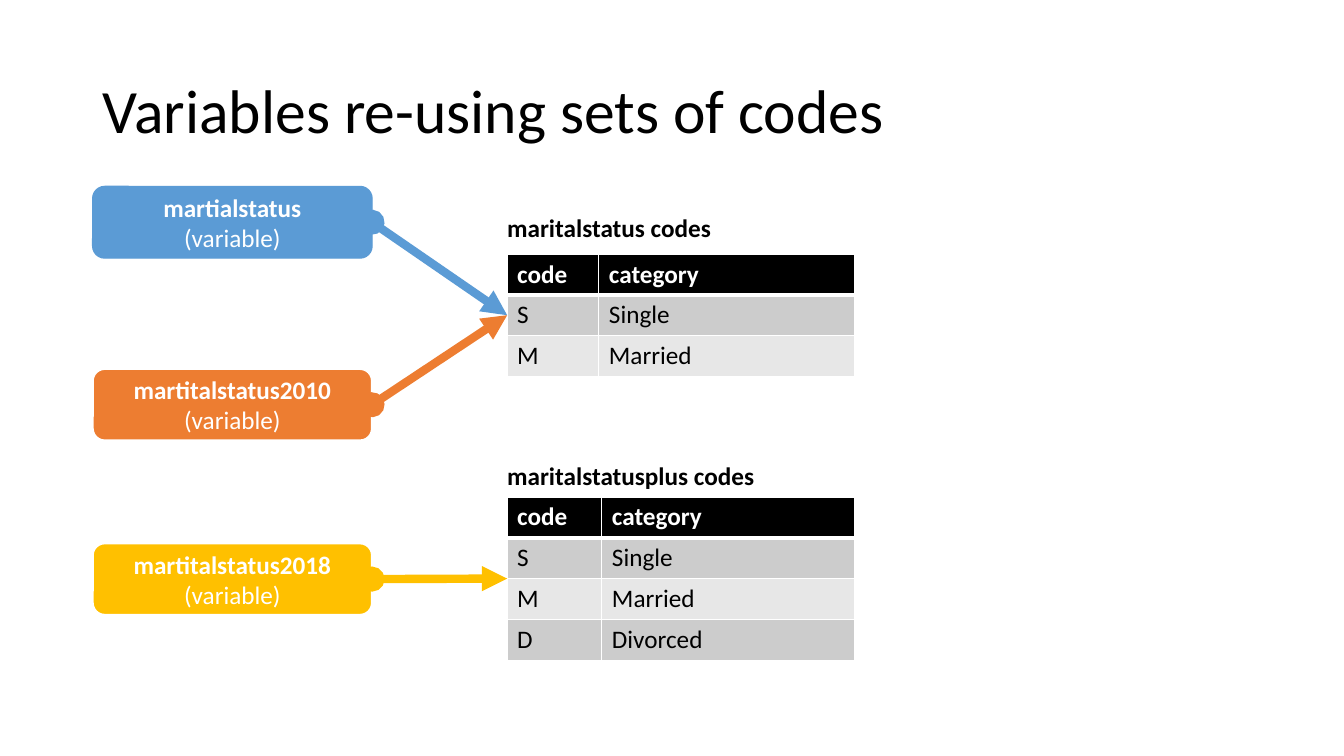
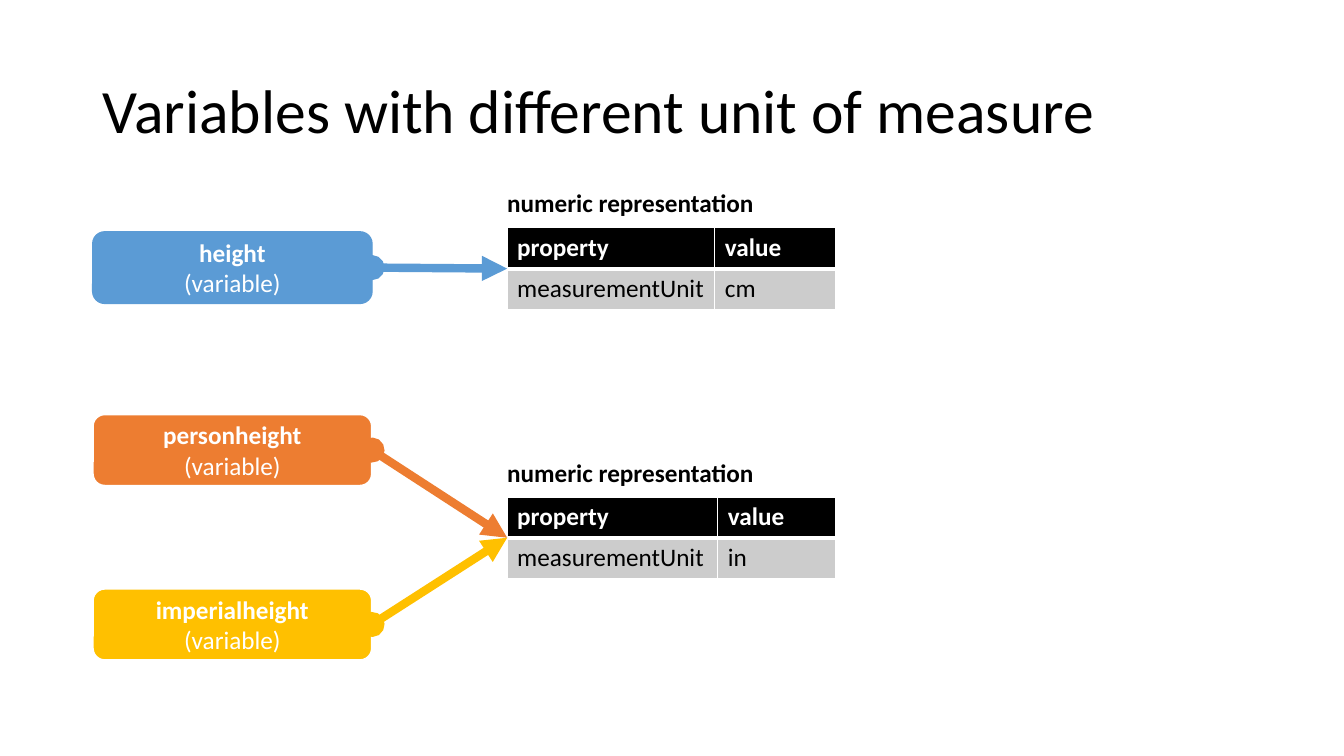
from dataclasses import dataclass
from typing import Any, NamedTuple

from lxml import etree
from pptx import Presentation, util as u
from pptx.dml.color import RGBColor
from pptx.enum import shapes, text
from pptx.oxml import parse_xml
from pptx.oxml.ns import nsdecls, qn

Inches, Pt = u.Inches, u.Pt


# Theme
@dataclass(frozen=True)
class Theme:
    font: str = "Calibri"
    title: int = 44
    body: int = 18
    dark: str = "000000"
    light: str = "FFFFFF"
    bands: tuple[str, ...] = ("CCCCCC", "E7E7E7")
    fills: tuple[str, ...] = ("5B9BD5", "ED7D31", "FFC000")
    edges: tuple[str, ...] = ("5B9BD5", "FFFFFF", "FFFFFF")
    rules: tuple[float, ...] = (1, 1.5, 1.5)
    arrow: int = 6
    thin: int = 1
    thick: int = 3


T = Theme()
LEFT, WIDE, HIGH = Inches(0.92), Inches(2.77), Inches(0.71)
STEPS = (0, 1.81, 3.54)
GRID, ROW, LABEL = Inches(5.03), Inches(0.81) // 2, Inches(2.88)


# Content types
class Codes(NamedTuple):
    label: str
    over: float
    top: float
    cols: tuple[float, ...]
    rows: tuple[tuple[str, ...], ...]


class Page(NamedTuple):
    title: str
    width: float
    top: float
    names: tuple[str, ...]
    goals: tuple[int, ...]
    grids: tuple[Codes, ...]


CODE = ("code", "category")
PROP = ("property", "value")
SINGLE, WED = ("S", "Single"), ("M", "Married")
UNIT = "measurementUnit"

PAGES = (
    Page("Variables re-using sets of codes", 11.5, 1.85,
         ("martialstatus", "martitalstatus2010", "martitalstatus2018"),
         (0, 0, 1),
         (Codes("maritalstatus codes", 2.07, 2.52, (0.91, 2.54),
                (CODE, SINGLE, WED)),
          Codes("maritalstatusplus codes", 4.53, 4.93, (0.94, 2.51),
                (CODE, SINGLE, WED, ("D", "Divorced"))))),
    Page("Variables with different unit of measure", 12.2, 2.3,
         ("height", "personheight", "imperialheight"),
         (0, 1, 1),
         (Codes("numeric representation", 1.82, 2.26, (2.06, 1.2),
                (PROP, (UNIT, "cm"))),
          Codes("numeric representation", 4.5, 4.93, (2.09, 1.17),
                (PROP, (UNIT, "in"))))),
)


# Helpers
def style(font: Any, size: int, color: str, bold: bool | None = None) -> None:
    font.name, font.size, font.bold = T.font, Pt(size), bold
    font.color.rgb = RGBColor.from_string(color)


def border(cell: Any, top: float, bottom: float) -> None:
    props = cell._tc.get_or_add_tcPr()
    sides = (("L", T.thin), ("R", T.thin), ("T", top), ("B", bottom))
    for spot, (side, width) in enumerate(sides):
        props.insert(spot, parse_xml(
            f'<a:ln{side} {nsdecls("a")} w="{Pt(width)}"><a:solidFill>'
            f'<a:srgbClr val="{T.light}"/></a:solidFill></a:ln{side}>'))


def fill_cell(cell: Any, words: str, color: str, bold: bool,
              back: str | None) -> None:
    cell.text = words
    style(cell.text_frame.paragraphs[0].font, T.body, color, bold)
    if back:
        cell.fill.solid()
        cell.fill.fore_color.rgb = RGBColor.from_string(back)
    else:
        cell.fill.background()


# Parts of a slide
def add_title(slide: Any, page: Page) -> None:
    title = slide.shapes.title
    title.left, title.top = LEFT, Inches(0.4)
    title.width, title.height = Inches(page.width), Inches(1.45)
    title.text = page.title
    title.text_frame.vertical_anchor = text.MSO_ANCHOR.MIDDLE
    para = title.text_frame.paragraphs[0]
    para.alignment, para.line_spacing = text.PP_ALIGN.LEFT, 0.9
    style(para.font, T.title, T.dark)


def add_label(slide: Any, grid: Codes) -> None:
    table = slide.shapes.add_table(
        1, 1, GRID, Inches(grid.over), LABEL, ROW).table
    cell = table.cell(0, 0)
    cell.margin_left = 0
    fill_cell(cell, grid.label, T.dark, True, None)
    border(cell, T.thin, T.thick)


def add_grid(slide: Any, grid: Codes) -> Any:
    count = len(grid.rows)
    frame = slide.shapes.add_table(
        count, len(grid.cols), GRID, Inches(grid.top),
        Inches(sum(grid.cols)), ROW * count)
    table = frame.table
    for col, width in zip(table.columns, grid.cols):
        col.width = Inches(width)
    for r, row in enumerate(grid.rows):
        head = r == 0
        back = T.dark if head else T.bands[(r - 1) % 2]
        for c, words in enumerate(row):
            cell = table.cell(r, c)
            fill_cell(cell, words, T.light if head else T.dark, head, back)
            border(cell, T.thick if r == 1 else T.thin,
                   T.thick if head else T.thin)
    return frame


def add_box(slide: Any, name: str, top: float, kind: int) -> Any:
    box = slide.shapes.add_shape(
        shapes.MSO_SHAPE.ROUNDED_RECTANGLE, LEFT, Inches(top), WIDE, HIGH)
    box.shadow.inherit = False
    box.fill.solid()
    box.fill.fore_color.rgb = RGBColor.from_string(T.fills[kind])
    box.line.color.rgb = RGBColor.from_string(T.edges[kind])
    box.line.width = Pt(T.rules[kind])
    box.text_frame.vertical_anchor = text.MSO_ANCHOR.MIDDLE
    para = box.text_frame.paragraphs[0]
    para.alignment = text.PP_ALIGN.CENTER
    style(para.font, T.body, T.light)
    run = para.add_run()
    run.text, run.font.bold = name, True
    para.add_line_break()
    para.add_run().text = "(variable)"
    return box


def add_arrow(slide: Any, box: Any, goal: Any, color: str) -> None:
    line = slide.shapes.add_connector(
        shapes.MSO_CONNECTOR.STRAIGHT, box.left + box.width,
        box.top + box.height // 2, goal.left, goal.top + goal.height // 2)
    line.begin_connect(box, 3)
    line.line.color.rgb = RGBColor.from_string(color)
    line.line.width = Pt(T.arrow)
    stroke = line.line._get_or_add_ln()
    for end, mark in (("headEnd", "oval"), ("tailEnd", "triangle")):
        etree.SubElement(stroke, qn(f"a:{end}")).set("type", mark)
    etree.SubElement(line._element.spPr, qn("a:effectLst"))


def build(deck: Any, page: Page) -> None:
    slide = deck.slides.add_slide(deck.slide_layouts[5])
    add_title(slide, page)
    goals = []
    for grid in page.grids:
        add_label(slide, grid)
        goals.append(add_grid(slide, grid))
    for kind, (name, step) in enumerate(zip(page.names, STEPS)):
        box = add_box(slide, name, page.top + step, kind)
        add_arrow(slide, box, goals[page.goals[kind]], T.fills[kind])


def main() -> None:
    deck = Presentation()
    deck.slide_width, deck.slide_height = Inches(13.33), Inches(7.5)
    for page in PAGES:
        build(deck, page)
    deck.save("out.pptx")


if __name__ == "__main__":
    main()
